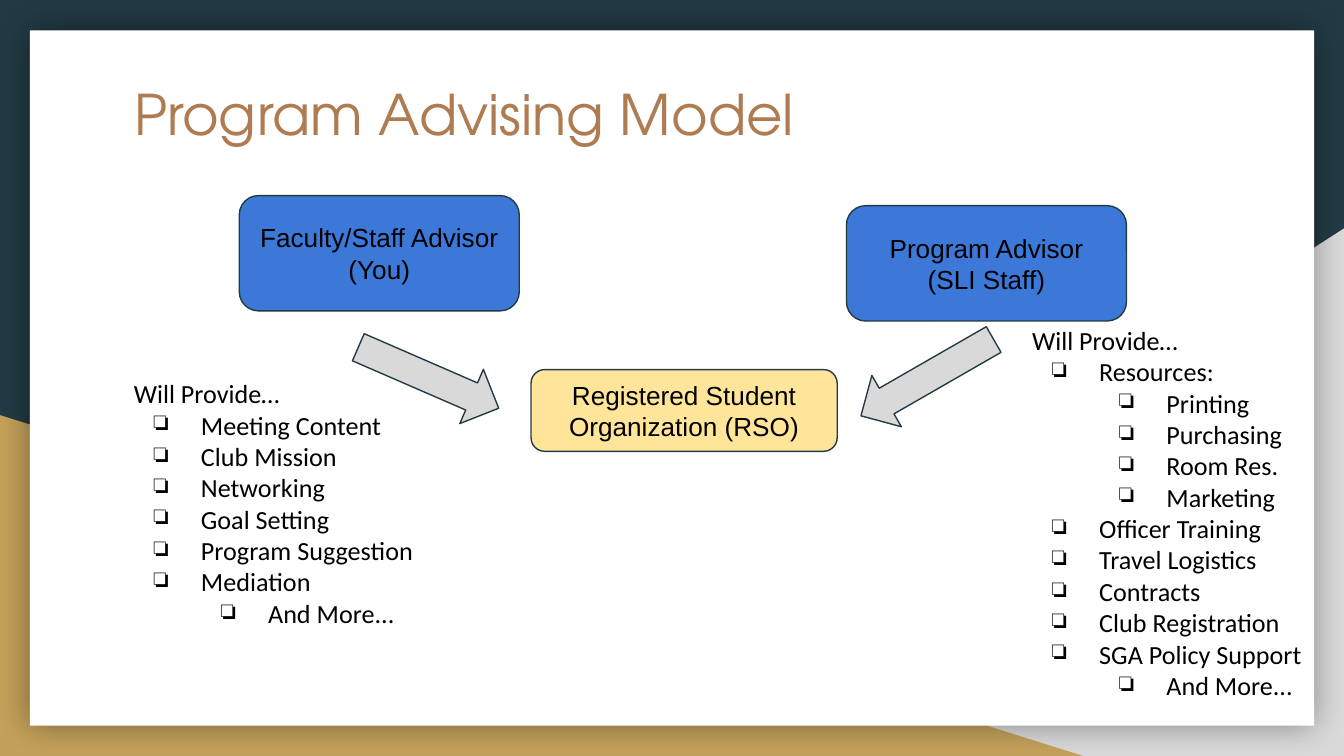
"""Build the Program Advising Model slide."""
from lxml import etree
from pptx import Presentation
from pptx.dml.color import RGBColor
from pptx.enum.shapes import MSO_SHAPE
from pptx.enum.text import MSO_ANCHOR, PP_ALIGN
from pptx.oxml.ns import qn
from pptx.util import Pt

WEDGE = MSO_SHAPE.RIGHT_TRIANGLE
RECT = MSO_SHAPE.RECTANGLE
ROUND = MSO_SHAPE.ROUNDED_RECTANGLE
PILL = MSO_SHAPE.FLOWCHART_ALTERNATE_PROCESS
ARROW = MSO_SHAPE.LEFT_ARROW
TOP, MIDDLE = MSO_ANCHOR.TOP, MSO_ANCHOR.MIDDLE
LEFT, CENTER = PP_ALIGN.LEFT, PP_ALIGN.CENTER

NAVY = RGBColor(0x23, 0x3A, 0x44)
GOLD = RGBColor(0xC4, 0xA1, 0x5A)
GRAY = RGBColor(0xD9, 0xD9, 0xD9)
WHITE = RGBColor(0xFF, 0xFF, 0xFF)
BLACK = RGBColor(0, 0, 0)
BROWN = RGBColor(0xAF, 0x7B, 0x51)
BLUE = RGBColor(0x3C, 0x78, 0xD8)
CREAM = RGBColor(0xFF, 0xE5, 0x99)


def draw(kind, box, fill, line=None):
    shape = slide.shapes.add_shape(kind, *map(Pt, box))
    shape.shadow.inherit = False
    shape.fill.solid()
    shape.fill.fore_color.rgb = fill
    if line is None:
        shape.line.fill.background()
    else:
        shape.line.color.rgb = line
        shape.line.width = Pt(0.75)
    return shape


def write(shape, text, level=0, size=14, font="Arial", color=BLACK,
          align=LEFT, anchor=TOP, more=False):
    frame = shape.text_frame
    frame.word_wrap = True
    frame.vertical_anchor = anchor
    frame.margin_left = frame.margin_right = Pt(7.2)
    frame.margin_top = frame.margin_bottom = Pt(7.2)
    para = frame.add_paragraph() if more else frame.paragraphs[0]
    para.text = text
    para.alignment = align
    for run in para.runs:
        run.font.size = Pt(size)
        run.font.name = font
        run.font.color.rgb = color
    for gap in para._p.findall(qn("a:br")):
        etree.SubElement(gap, qn("a:rPr"), sz=str(size * 100))
    if level:
        para.level = level - 1
        props = para._p.get_or_add_pPr()
        props.set("marL", str(Pt(36 * level)))
        props.set("indent", str(Pt(-25.2)))
        tint = etree.SubElement(props, qn("a:buClr"))
        etree.SubElement(tint, qn("a:srgbClr"), val=str(color))
        etree.SubElement(props, qn("a:buChar"), char="❏")


deck = Presentation()
deck.slide_width, deck.slide_height = Pt(720), Pt(405)
slide = deck.slides.add_slide(deck.slide_layouts[5])
slide.background.fill.solid()
slide.background.fill.fore_color.rgb = NAVY

wedge = draw(WEDGE, (282.2, 122.4, 437.8, 282.6), GRAY)
wedge.element.spPr.xfrm.set("flipH", "1")
draw(WEDGE, (0, 222.4, 580.3, 182.6), GOLD)
panel = draw(RECT, (16, 16.2, 688, 372.6), WHITE)
glow = etree.SubElement(panel.element.spPr.find(qn("a:effectLst")),
                        qn("a:outerShdw"), blurRad=str(Pt(18)),
                        algn="ctr", rotWithShape="0")
shade = etree.SubElement(glow, qn("a:srgbClr"), val=str(BLACK))
etree.SubElement(shade, qn("a:alpha"), val="40000")

title = slide.shapes.title
slide.shapes.element.append(title.element)
title.left, title.top = Pt(64.6), Pt(35.3)
title.width, title.height = Pt(591), Pt(75)
write(title, "Program Advising Model", size=30,
      font="TeX Gyre Adventor", color=BROWN)

ROLES = [
    (PILL, (284.5, 198, 164, 43.8), CREAM,
     "Registered Student Organization (RSO)"),
    (ROUND, (128.2, 104.8, 150, 61.8), BLUE, "Faculty/Staff Advisor\n(You)"),
    (ROUND, (453.5, 110.2, 150, 61.8), BLUE, "Program Advisor\n(SLI Staff)"),
]
for kind, box, fill, text in ROLES:
    role = draw(kind, box, fill, NAVY)
    write(role, text, align=CENTER, anchor=MIDDLE)

for left, angle in ((188.6, 203.5), (455.8, 330.1)):
    arrow = draw(ARROW, (left, 186.5, 82, 31.7), GRAY, NAVY)
    arrow.rotation = angle

LISTS = [
    ((64.6, 195.1, 170.6, 126.7), [
        (0, "Will Provide…"), (1, "Meeting Content"), (1, "Club Mission"),
        (1, "Networking"), (1, "Goal Setting"), (1, "Program Suggestion"),
        (1, "Mediation"), (2, "And More...")]),
    ((545.8, 166.5, 163.4, 133.9), [
        (0, "Will Provide…"), (1, "Resources:"), (2, "Printing"),
        (2, "Purchasing"), (2, "Room Res."), (2, "Marketing"),
        (1, "Officer Training"), (1, "Travel Logistics"), (1, "Contracts"),
        (1, "Club Registration"), (1, "SGA Policy Support"),
        (2, "And More...")]),
]
for box, items in LISTS:
    notes = slide.shapes.add_textbox(*map(Pt, box))
    for row, (level, text) in enumerate(items):
        write(notes, text, level=level, font="Calibri", more=row > 0)

deck.save("out.pptx")
